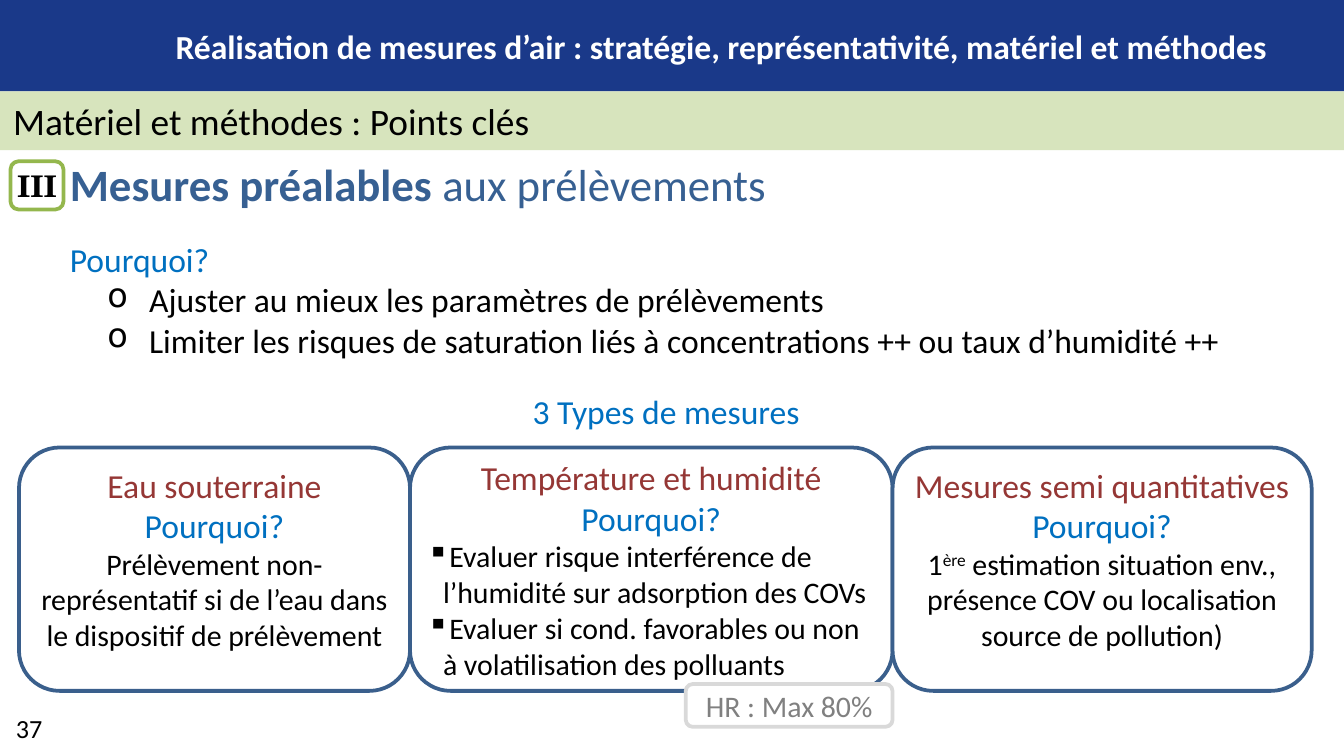
from lxml import etree
from pptx import Presentation
from pptx import util as u
from pptx.dml.color import RGBColor
from pptx.enum import shapes, text
from pptx.oxml.ns import qn

BLUE, RED, BLACK, GREY = "0070C0", "953735", "000000", "808080"
LEFT, CENTER = text.PP_ALIGN.LEFT, text.PP_ALIGN.CENTER
TOP, MIDDLE = text.MSO_ANCHOR.TOP, text.MSO_ANCHOR.MIDDLE
RECT = shapes.MSO_SHAPE.RECTANGLE
ROUNDED = shapes.MSO_SHAPE.ROUNDED_RECTANGLE


def color(value):
    return RGBColor.from_string(value)


def set_frame(sp, anchor, inset=None, wrap=True):
    tf = sp.text_frame
    tf.word_wrap = wrap
    tf.vertical_anchor = anchor
    if inset is not None:
        tf.margin_left = tf.margin_right = u.Cm(inset)
        tf.margin_top = tf.margin_bottom = u.Cm(inset)
    return tf


def add_box(s, x, y, w, h, anchor=TOP, wrap=True):
    sp = s.shapes.add_textbox(u.Cm(x), u.Cm(y), u.Cm(w), u.Cm(h))
    return set_frame(sp, anchor, wrap=wrap)


def add_panel(s, kind, x, y, w, h, fill, line=None, anchor=MIDDLE, inset=None):
    sp = s.shapes.add_shape(kind, u.Cm(x), u.Cm(y), u.Cm(w), u.Cm(h))
    sp.shadow.inherit = False
    sp.fill.solid()
    sp.fill.fore_color.rgb = color(fill)
    if line:
        sp.line.color.rgb = color(line)
        sp.line.width = u.Pt(2)
    else:
        sp.line.fill.background()
    return set_frame(sp, anchor, inset)


def add_bullet(p, char, indent, hanging):
    pPr = p._p.get_or_add_pPr()
    pPr.set("marL", str(u.Cm(indent)))
    pPr.set("indent", str(-u.Cm(hanging)))
    etree.SubElement(pPr, qn("a:buChar")).set("char", char)


def write(tf, runs, size, rgb, align=LEFT, bold=False, font="Calibri", bullet=None):
    """Fill the first paragraph if it is free, otherwise append one."""
    p = tf.paragraphs[0] if not tf.text else tf.add_paragraph()
    p.alignment = align
    if bullet:
        add_bullet(p, *bullet)
    for part in [runs] if isinstance(runs, str) else runs:
        r = p.add_run()
        r.text = part
        r.font.name = font
        r.font.size = u.Pt(size)
        r.font.bold = bold
        r.font.color.rgb = color(rgb)
    return p


def add_header(s):
    add_panel(s, RECT, 0, 0, 25.4, 1.73, "1A3989")
    write(add_box(s, 2.21, 0.36, 22.86, 1.02),
          "Réalisation de mesures d’air : stratégie, représentativité, matériel et méthodes",
          18, "FFFFFF", CENTER, bold=True)
    tf = add_panel(s, RECT, 0, 1.73, 25.4, 1.11, "D7E4BD")
    write(tf, "Matériel et méthodes : Points clés", 20, BLACK)


def add_section_title(s):
    p = write(add_box(s, 1.07, 2.84, 23.22, 1.27),
              ["Mesures préalables ", "aux prélèvements"], 24, "376092")
    p.runs[0].font.bold = True
    tf = add_panel(s, ROUNDED, 0.2, 3.05, 1, 0.91, "FFFFFF", "94B74D", inset=0)
    write(tf, "III", 16, BLACK, CENTER, bold=True, font="TeX Gyre Schola")


def add_reasons(s):
    tf = add_box(s, 1.07, 4.39, 23.95, 3.02)
    write(tf, "Pourquoi?", 18, BLUE)
    for reason in (
        "Ajuster au mieux les paramètres de prélèvements",
        "Limiter les risques de saturation liés à concentrations ++ ou taux d’humidité ++",
    ):
        write(tf, reason, 18, BLACK, bullet=("o", 1.5, 0.79))


def add_card(s, x, w, title, anchor=TOP):
    tf = add_panel(s, ROUNDED, x, 8.46, w, 4.6, "FFFFFF", "3A5F8C", anchor, 0.1)
    write(tf, title, 18, RED, CENTER)
    write(tf, "Pourquoi?", 18, BLUE, CENTER)
    return tf


def add_measure_types(s):
    write(add_box(s, 0.36, 7.14, 24.46, 1.27, MIDDLE),
          "3 Types de mesures", 18, BLUE, CENTER)

    # Three touching cards
    widths = (7.39, 9.12, 7.92)
    x1 = 0.36
    x2 = x1 + widths[0]
    x3 = x2 + widths[1]

    tf = add_card(s, x1, widths[0], "Eau souterraine")
    write(tf, "Prélèvement non-représentatif si de l’eau dans le dispositif de prélèvement",
          16, BLACK, CENTER)

    tf = add_card(s, x2, widths[1], "Température et humidité", MIDDLE)
    for reason in (
        "Evaluer risque interférence de l’humidité sur adsorption des COVs",
        "Evaluer si cond. favorables ou non à volatilisation des polluants",
    ):
        write(tf, reason, 16, BLACK, bullet=("▪", 0.3, 0.3))

    tf = add_card(s, x3, widths[2], "Mesures semi quantitatives")
    p = write(tf, ["1", "ère", " estimation situation env., présence COV "
                   "ou localisation source de pollution)"], 16, BLACK, CENTER)
    p.runs[1].font._element.set("baseline", "30000")

    # Humidity limit, aligned with the right edge of the middle card
    tag_width = 3.91
    tf = add_panel(s, ROUNDED, x3 - tag_width, 12.93, tag_width, 0.81, "FFFFFF", "D9D9D9")
    write(tf, "HR : Max 80%", 16, GREY, CENTER)


def main():
    prs = Presentation()
    prs.slide_width, prs.slide_height = u.Cm(25.4), u.Cm(14.29)
    s = prs.slides.add_slide(prs.slide_layouts[6])
    add_header(s)
    add_section_title(s)
    add_reasons(s)
    add_measure_types(s)
    # Page number
    write(add_box(s, 0.05, 13.34, 1.35, 0.86, wrap=False), "37", 14, BLACK)
    prs.save("out.pptx")


if __name__ == "__main__":
    main()
